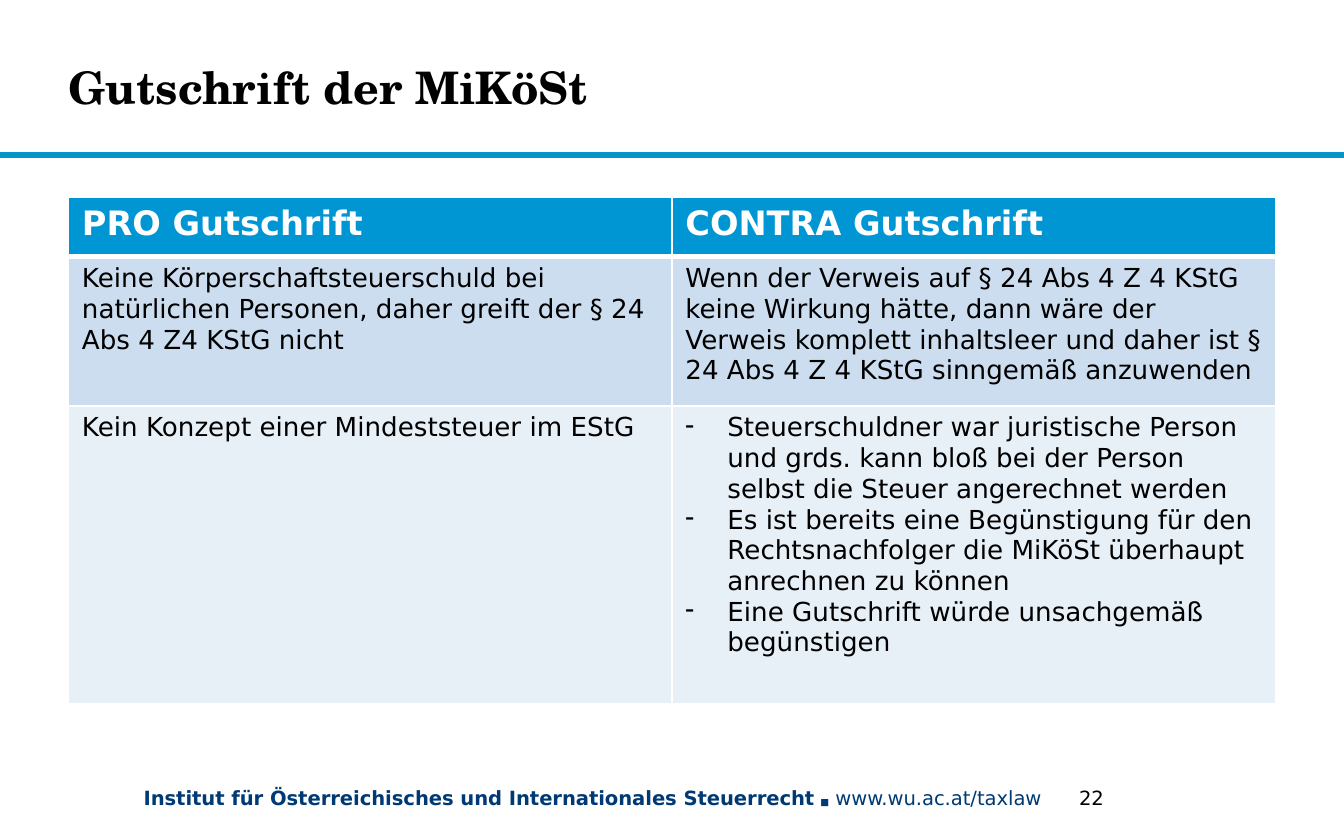
from dataclasses import dataclass

from lxml import etree
from pptx import Presentation
from pptx.dml.color import RGBColor
from pptx.enum.shapes import MSO_SHAPE
from pptx.enum.text import MSO_ANCHOR, PP_ALIGN
from pptx.oxml.ns import qn
from pptx.util import Pt

RECTANGLE = MSO_SHAPE.RECTANGLE
MIDDLE = MSO_ANCHOR.MIDDLE
LEFT = PP_ALIGN.LEFT
TITLE_ONLY = 5


@dataclass(frozen=True)
class Theme:
    title_font: str = "TeX Gyre Schola"
    body_font: str = "DejaVu Sans"
    black: str = "000000"
    white: str = "FFFFFF"
    navy: str = "003A74"
    blue: str = "0096D3"
    rule_fill: str = "0C94B7"
    band_dark: str = "CCDDEF"
    band_light: str = "E7EFF7"
    title_size: float = 24
    header_size: float = 18
    cell_size: float = 14
    footer_size: float = 10.5
    gap_size: float = 8
    square_size: float = 5


@dataclass(frozen=True)
class Box:
    left: float
    top: float
    width: float
    height: float

    def lengths(self) -> tuple:
        return Pt(self.left), Pt(self.top), Pt(self.width), Pt(self.height)


@dataclass(frozen=True)
class Style:
    size: float
    color: str
    bold: bool = False
    font: str = Theme.body_font


@dataclass(frozen=True)
class Piece:
    text: str
    style: Style


@dataclass(frozen=True)
class TableRow:
    height: float
    fill: str
    style: Style
    top_border: float
    bottom_border: float
    cells: tuple


THEME = Theme()
HEADER = Style(THEME.header_size, THEME.white, True)
BODY = Style(THEME.cell_size, THEME.black)
FOOTER_BOLD = Style(THEME.footer_size, THEME.navy, True)
FOOTER = Style(THEME.footer_size, THEME.navy)
PAGE_NUMBER = Style(THEME.footer_size, THEME.black)
TITLE = Style(THEME.title_size, THEME.black, True, THEME.title_font)

TITLE_BOX = Box(36.72, 10.8, 538.5, 71.3)
RULE_BOX = Box(0, 82.1, 720, 2.2)
TABLE_BOX = Box(36.72, 105.84, 646.56, 271.44)
FOOTER_BOX = Box(69.84, 417.6, 501, 20)
NUMBER_BOX = Box(571, 417.6, 52, 20)
BULLET_INDENT = 22.5

ROWS = (
    TableRow(31.68, THEME.blue, HEADER, 1, 3,
             (("PRO Gutschrift",), ("CONTRA Gutschrift",))),
    TableRow(79.92, THEME.band_dark, BODY, 3, 1, (
        ("Keine Körperschaftsteuerschuld bei natürlichen Personen, daher "
         "greift der § 24 Abs 4 Z4 KStG nicht",),
        ("Wenn der Verweis auf § 24 Abs 4 Z 4 KStG keine Wirkung hätte, dann "
         "wäre der Verweis komplett inhaltsleer und daher ist § 24 Abs 4 Z 4 "
         "KStG sinngemäß anzuwenden",))),
    TableRow(159.84, THEME.band_light, BODY, 1, 1, (
        ("Kein Konzept einer Mindeststeuer im EStG",),
        ("Steuerschuldner war juristische Person und grds. kann bloß bei der "
         "Person selbst die Steuer angerechnet werden",
         "Es ist bereits eine Begünstigung für den Rechtsnachfolger die "
         "MiKöSt überhaupt anrechnen zu können",
         "Eine Gutschrift würde unsachgemäß begünstigen"))),
)

FOOTER_PIECES = (
    Piece("Institut für Österreichisches und Internationales Steuerrecht", FOOTER_BOLD),
    Piece(" ", Style(THEME.gap_size, THEME.navy, True)),
    Piece("■", Style(THEME.square_size, THEME.navy)),
    Piece(" www.wu.ac.at/taxlaw", FOOTER),
)


def format_run(run, style: Style) -> None:
    run.font.name = style.font
    run.font.size = Pt(style.size)
    run.font.bold = style.bold
    run.font.color.rgb = RGBColor.from_string(style.color)


def add_title(page, text: str) -> None:
    title = page.shapes.title
    title.left, title.top, title.width, title.height = TITLE_BOX.lengths()
    frame = title.text_frame
    frame.text = text
    frame.vertical_anchor = MIDDLE
    frame.margin_left = frame.margin_right = 0
    frame.margin_top = frame.margin_bottom = 0
    para = frame.paragraphs[0]
    para.alignment = LEFT
    format_run(para.runs[0], TITLE)


def add_rule(page) -> None:
    rule = page.shapes.add_shape(RECTANGLE, *RULE_BOX.lengths())
    rule.shadow.inherit = False
    rule.fill.solid()
    rule.fill.fore_color.rgb = RGBColor.from_string(THEME.rule_fill)
    rule.line.color.rgb = RGBColor.from_string(THEME.blue)
    rule.line.width = Pt(1)


def add_text(page, box: Box, pieces: tuple) -> None:
    frame = page.shapes.add_textbox(*box.lengths()).text_frame
    frame.word_wrap = True
    for piece in pieces:
        run = frame.paragraphs[0].add_run()
        run.text = piece.text
        format_run(run, piece.style)


def add_dash(para) -> None:
    properties = para._p.get_or_add_pPr()
    properties.set("marL", str(Pt(BULLET_INDENT)))
    properties.set("indent", str(-Pt(BULLET_INDENT)))
    etree.SubElement(properties, qn("a:buChar"), char="-")


def add_borders(cell, row: TableRow) -> None:
    properties = cell._tc.get_or_add_tcPr()
    widths = {"L": 1, "R": 1, "T": row.top_border, "B": row.bottom_border}
    for side, width in widths.items():
        line = etree.SubElement(properties, qn(f"a:ln{side}"), w=str(Pt(width)))
        fill = etree.SubElement(line, qn("a:solidFill"))
        etree.SubElement(fill, qn("a:srgbClr"), val=THEME.white)


def fill_cell(cell, lines: tuple, row: TableRow) -> None:
    add_borders(cell, row)
    cell.fill.solid()
    cell.fill.fore_color.rgb = RGBColor.from_string(row.fill)
    cell.text_frame.text = "\n".join(lines)
    for para in cell.text_frame.paragraphs:
        if len(lines) > 1:
            add_dash(para)
        format_run(para.runs[0], row.style)


def add_arguments(page) -> None:
    columns = len(ROWS[0].cells)
    table = page.shapes.add_table(len(ROWS), columns, *TABLE_BOX.lengths()).table
    for row_index, row in enumerate(ROWS):
        table.rows[row_index].height = Pt(row.height)
        for column_index, lines in enumerate(row.cells):
            fill_cell(table.cell(row_index, column_index), lines, row)


def main() -> None:
    deck = Presentation()
    deck.slide_width, deck.slide_height = Pt(720), Pt(450)
    page = deck.slides.add_slide(deck.slide_layouts[TITLE_ONLY])
    add_rule(page)
    add_text(page, FOOTER_BOX, FOOTER_PIECES)
    add_arguments(page)
    add_title(page, "Gutschrift der MiKöSt")
    add_text(page, NUMBER_BOX, (Piece("22", PAGE_NUMBER),))
    deck.save("out.pptx")


if __name__ == "__main__":
    main()
